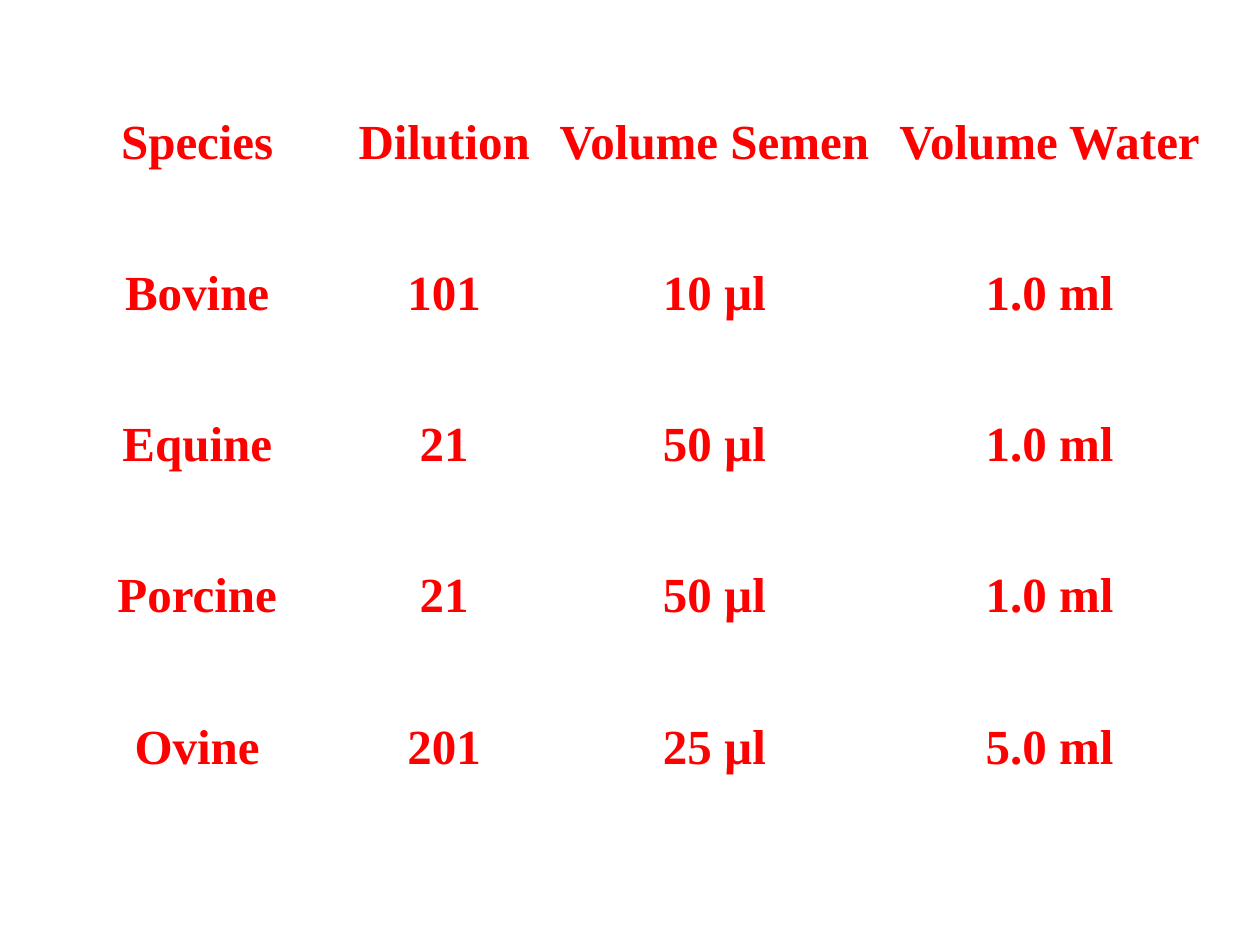
"""Builds a slide with a table of semen dilutions by species."""
from dataclasses import dataclass

from pptx import Presentation
from pptx.dml.color import RGBColor
from pptx.enum.text import MSO_ANCHOR, PP_ALIGN
from pptx.slide import Slide
from pptx.util import Inches, Pt

DILUTIONS = [
    ("Species", "Dilution", "Volume Semen", "Volume Water"),
    ("Bovine", "101", "10 µl", "1.0 ml"),
    ("Equine", "21", "50 µl", "1.0 ml"),
    ("Porcine", "21", "50 µl", "1.0 ml"),
    ("Ovine", "201", "25 µl", "5.0 ml"),
]
COLUMN_WIDTHS = (2.13, 1.79, 2.5, 2.82)
ROW_HEIGHT = 1.2


def color(hex_string):
    return RGBColor.from_string(hex_string)


@dataclass
class SlideBuilder:
    slide: Slide
    font: str = "Times New Roman"
    size: int = 28
    ink: str = "FF0000"

    def table(self, left, top, widths, row_height, rows):
        table = self.slide.shapes.add_table(
            len(rows), len(widths), Inches(left), Inches(top),
            Inches(sum(widths)), Inches(row_height * len(rows))).table
        table.first_row = table.horz_banding = False
        for column, width in zip(table.columns, widths):
            column.width = Inches(width)
        for row, values in zip(table.rows, rows):
            row.height = Inches(row_height)
            for cell, value in zip(row.cells, values):
                self.fill_cell(cell, value)

    def fill_cell(self, cell, value):
        cell.fill.background()
        cell.vertical_anchor = MSO_ANCHOR.MIDDLE
        cell.margin_left = cell.margin_right = 0
        cell.margin_top = cell.margin_bottom = 0
        cell.text_frame.text = value
        paragraph = cell.text_frame.paragraphs[0]
        paragraph.alignment = PP_ALIGN.CENTER
        paragraph.line_spacing = 1.15
        font = paragraph.runs[0].font
        font.name, font.size, font.bold = self.font, Pt(self.size), True
        font.color.rgb = color(self.ink)


def main():
    presentation = Presentation()
    presentation.slide_width = Inches(10)
    presentation.slide_height = Inches(7.5)
    builder = SlideBuilder(
        presentation.slides.add_slide(presentation.slide_layouts[6]))
    builder.table(0.5, 0.5, COLUMN_WIDTHS, ROW_HEIGHT, DILUTIONS)
    presentation.save("out.pptx")


if __name__ == "__main__":
    main()
